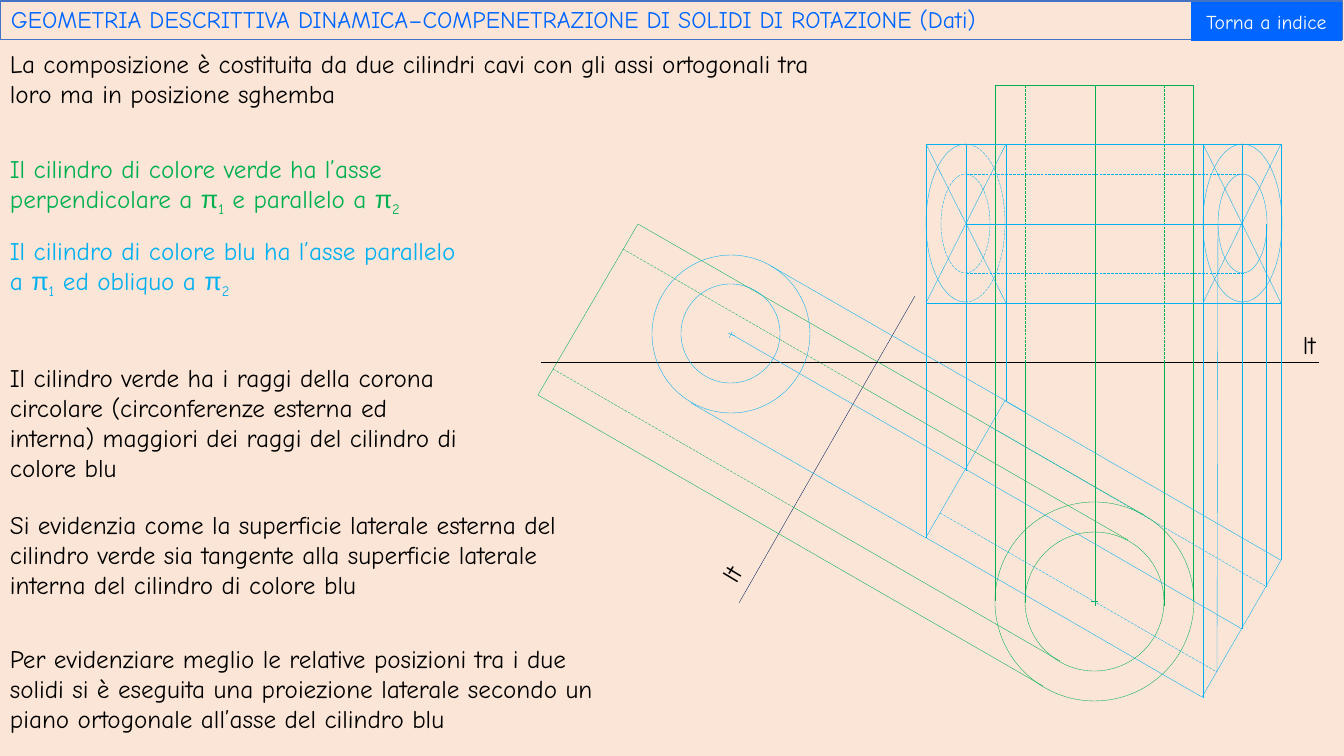
import pptx
import pptx.util
import pptx.dml.color
import pptx.enum.dml
import pptx.enum.shapes
import pptx.enum.text
from dataclasses import dataclass
from pptx.oxml.ns import qn


@dataclass(frozen=True)
class Theme:
    background: str = "FBE5D6"
    black: str = "000000"
    white: str = "FFFFFF"
    green: str = "00B050"
    blue: str = "00B0F0"
    navy: str = "002060"
    accent: str = "0066FF"
    frame: str = "4472C4"
    font: str = "Comic Neue"
    symbol_font: str = "Arial"
    title_size: int = 17
    body_size: int = 18
    button_size: int = 14
    hairline: float = 0.25
    frame_line: float = 0.75


THEME = Theme()
SLIDE_SIZE = (1344, 756)
TITLE = "GEOMETRIA DESCRITTIVA DINAMICA–COMPENETRAZIONE DI SOLIDI DI ROTAZIONE (Dati)"
TITLE_BOX = (1, 1, 1342, 39)
BUTTON = "Torna a indice"
BUTTON_BOX = (1191, 2, 151, 39)

TEXTS = [
    ((0, 43, 854, 72), THEME.black,
     ["La composizione è costituita da due cilindri cavi con gli assi ortogonali "
      "tra loro ma in posizione sghemba"]),
    ((0, 148, 476, 72), THEME.green,
     ["Il cilindro di colore verde ha l’asse perpendicolare a ", "π", "1",
      " e parallelo a ", "π", "2"]),
    ((0, 230, 476, 72), THEME.blue,
     ["Il cilindro di colore blu ha l’asse parallelo a ", "π", "1",
      " ed obliquo a ", "π", "2"]),
    ((0, 357, 476, 132), THEME.black,
     ["Il cilindro verde ha i raggi della corona circolare (circonferenze esterna ed "
      "interna) maggiori dei raggi del cilindro di colore blu"]),
    ((0, 504, 581, 102), THEME.black,
     ["Si evidenzia come la superficie laterale esterna del cilindro verde sia "
      "tangente alla superficie laterale interna del cilindro di colore blu"]),
    ((0, 638, 618, 102), THEME.black,
     ["Per evidenziare meglio le relative posizioni tra i due solidi si è eseguita una "
      "proiezione laterale secondo un piano ortogonale all’asse del cilindro blu"]),
]
GROUND_LABELS = [((1293, 324, 44, 40), 0), ((712, 549, 44, 40), 301)]

GROUND_LINES = [(THEME.black, (541, 362, 1319, 362)), (THEME.navy, (739, 603, 915, 296))]
GREEN_LINES = [
    (995, 601, 995, 85), (1193, 601, 1193, 85), (995, 85, 1193, 85),
    (1095, 602, 1095, 86), (1091, 601, 1098, 601), (1095, 598, 1095, 606),
    (1025, 603, 1025, 362), (1164, 606, 1164, 362),
    (538, 395, 1043, 686), (638, 224, 1144, 515), (538, 395, 638, 224),
    (793, 507, 1060, 661), (864, 388, 1128, 540),
]
GREEN_DASHED = [
    (1025, 363, 1025, 85), (1164, 363, 1164, 85),
    (553, 369, 793, 507), (623, 249, 864, 388),
]
TOP, MIDDLE, BOTTOM = 144, 224, 303
BLUE_LINES = [
    (926, TOP, 1281, TOP), (926, BOTTOM, 1281, BOTTOM), (966, MIDDLE, 1242, MIDDLE),
    (926, 538, 926, TOP), (966, 471, 966, TOP), (1006, 401, 1006, TOP),
    (1203, 698, 1203, TOP), (1242, 629, 1242, TOP), (1281, 560, 1281, TOP),
    (1217, 672, 1218, MIDDLE), (1266, 587, 1266, MIDDLE),
    (691, 403, 926, 538), (1025, 412, 771, 266),
    (728, 333, 735, 336), (732, 332, 729, 338),
]
BLUE_DASHED = [
    (991, 427, 1267, 587), (940, 513, 1217, 672),
    (966, 273, 1244, 273), (966, 174, 1242, 174),
]
END_FACES = [(926, 1006), (1203, 1281)]
PLAN_BOX = (944, 470, 319, 158)
PLAN_ANGLE = 30
AXIS_START, AXIS_ENTRY, AXIS_EXIT = (731, 334), (967, 470), (1242, 629)

SHAPES = pptx.enum.shapes.MSO_SHAPE
ELLIPSES = [
    (THEME.green, (995, 502, 199, 199), False),
    (THEME.green, (1025, 532, 139, 139), False),
    (THEME.blue, (652, 255, 158, 158), False),
    (THEME.blue, (681, 284, 99, 99), False),
    (THEME.blue, (1203, 144, 79, 158), False),
    (THEME.blue, (1218, 174, 49, 99), False),
    (THEME.blue, (941, 174, 49, 99), True),
]
HALF_ELLIPSE_BOX = (926, 144, 79, 158)
HALF_ELLIPSES = [((162, 54), True), ((54, 162), False)]


def emu(px):
    return pptx.util.Emu(round(px * 914400 / 100.8))


def rgb(colour):
    return pptx.dml.color.RGBColor.from_string(colour)


def style_line(line, colour, dashed=False, width=THEME.hairline):
    line.color.rgb = rgb(colour)
    line.width = pptx.util.Pt(width)
    if dashed:
        line.dash_style = pptx.enum.dml.MSO_LINE.LONG_DASH


def add_line(slide, colour, points, dashed=False):
    connector = slide.shapes.add_connector(
        pptx.enum.shapes.MSO_CONNECTOR.STRAIGHT, *map(emu, points))
    style_line(connector.line, colour, dashed)
    properties = connector._element.spPr
    properties.append(properties.makeelement(qn("a:effectLst"), {}))
    return connector


def add_outline(slide, kind, box, colour, dashed=False, width=THEME.hairline):
    shape = slide.shapes.add_shape(kind, *map(emu, box))
    shape.shadow.inherit = False
    shape.fill.background()
    style_line(shape.line, colour, dashed, width)
    return shape


def write(shape, parts, size, colour, align=pptx.enum.text.PP_ALIGN.LEFT):
    shape.text_frame.word_wrap = True
    paragraph = shape.text_frame.paragraphs[0]
    paragraph.alignment = align
    paragraph.font.name = THEME.font
    paragraph.font.size = pptx.util.Pt(size)
    paragraph.font.color.rgb = rgb(colour)
    for part in parts:
        run = paragraph.add_run()
        run.text = part
        if part == "π":
            run.font.name = THEME.symbol_font
        elif part.isdigit():
            run._r.get_or_add_rPr().set("baseline", "-25000")
    return paragraph


def add_text(slide, box, parts, colour, angle=0):
    textbox = slide.shapes.add_textbox(*map(emu, box))
    textbox.rotation = angle
    write(textbox, parts, THEME.body_size, colour)
    textbox.text_frame.auto_size = pptx.enum.text.MSO_AUTO_SIZE.SHAPE_TO_FIT_TEXT


def add_drawing(slide):
    for colour, points in GROUND_LINES:
        add_line(slide, colour, points)
    diagonals = [(left, start, right, end) for left, right in END_FACES
                 for start, end in ((TOP, BOTTOM), (BOTTOM, TOP))]
    for colour, dashed, lines in (
            (THEME.green, False, GREEN_LINES), (THEME.green, True, GREEN_DASHED),
            (THEME.blue, False, BLUE_LINES + diagonals), (THEME.blue, True, BLUE_DASHED)):
        for points in lines:
            add_line(slide, colour, points, dashed)
    for colour, box, dashed in ELLIPSES:
        add_outline(slide, SHAPES.OVAL, box, colour, dashed)
    for angles, dashed in HALF_ELLIPSES:
        arc = add_outline(slide, SHAPES.ARC, HALF_ELLIPSE_BOX, THEME.blue, dashed)
        arc.adjustments[0], arc.adjustments[1] = angles


def add_plan_axis(slide):
    plan = add_outline(slide, SHAPES.RECTANGLE, PLAN_BOX, THEME.blue)
    plan.rotation = PLAN_ANGLE
    outer = add_line(slide, THEME.blue, AXIS_START + AXIS_ENTRY)
    outer.end_connect(plan, 1)
    inner = add_line(slide, THEME.blue, AXIS_ENTRY + AXIS_EXIT)
    inner.begin_connect(plan, 1)
    inner.end_connect(plan, 3)
    for axis, start, end in ((outer, AXIS_START, AXIS_ENTRY), (inner, AXIS_ENTRY, AXIS_EXIT)):
        axis.begin_x, axis.begin_y = map(emu, start)
        axis.end_x, axis.end_y = map(emu, end)


def add_header(slide):
    title = add_outline(slide, SHAPES.RECTANGLE, TITLE_BOX, THEME.frame, width=THEME.frame_line)
    paragraph = write(title, [TITLE], THEME.title_size, THEME.accent)
    paragraph.line_spacing = 0.9
    button = add_outline(slide, SHAPES.ACTION_BUTTON_CUSTOM, BUTTON_BOX, THEME.accent)
    button.fill.solid()
    button.fill.fore_color.rgb = rgb(THEME.accent)
    button.line.fill.background()
    write(button, [BUTTON], THEME.button_size, THEME.white, pptx.enum.text.PP_ALIGN.CENTER)
    for shape in (title, button):
        shape.text_frame.vertical_anchor = pptx.enum.text.MSO_ANCHOR.MIDDLE


def main():
    presentation = pptx.Presentation()
    presentation.slide_width, presentation.slide_height = map(emu, SLIDE_SIZE)
    slide = presentation.slides.add_slide(presentation.slide_layouts[6])
    slide.background.fill.solid()
    slide.background.fill.fore_color.rgb = rgb(THEME.background)
    add_drawing(slide)
    add_plan_axis(slide)
    add_header(slide)
    for box, angle in GROUND_LABELS:
        add_text(slide, box, ["lt"], THEME.black, angle)
    for box, colour, parts in TEXTS:
        add_text(slide, box, parts, colour)
    presentation.save("out.pptx")


if __name__ == "__main__":
    main()
